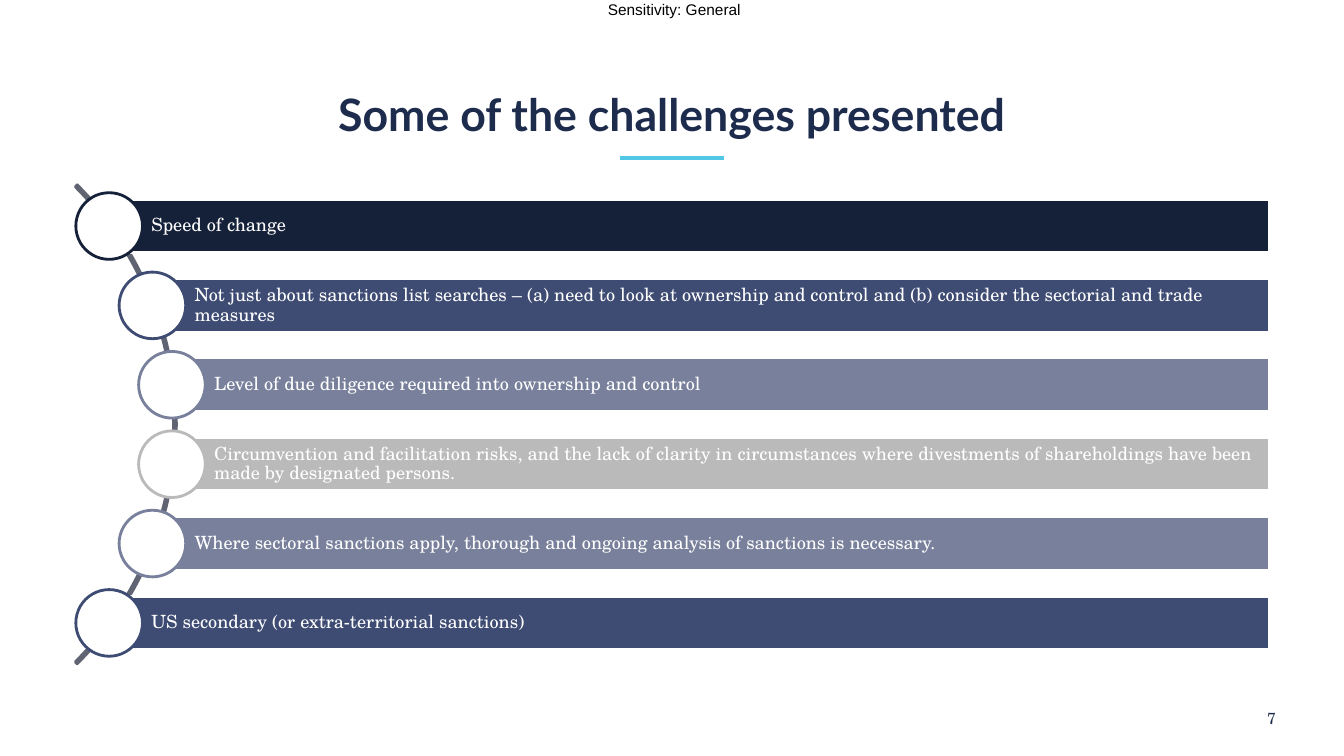
import math

import pptx
import pptx.dml.color
import pptx.enum.shapes
import pptx.enum.text
import pptx.oxml
import pptx.util

Pt = pptx.util.Pt
RGBColor = pptx.dml.color.RGBColor
Shape = pptx.enum.shapes.MSO_SHAPE
Align = pptx.enum.text.PP_ALIGN
Anchor = pptx.enum.text.MSO_ANCHOR

WHITE = RGBColor(0xFF, 0xFF, 0xFF)
BLACK = RGBColor(0x00, 0x00, 0x00)
INK = RGBColor(0x1D, 0x2B, 0x4D)
CYAN = RGBColor(0x52, 0xC7, 0xE6)
RAIL = RGBColor(0x60, 0x64, 0x72)
NAVY = RGBColor(0x15, 0x20, 0x39)
BLUE = RGBColor(0x3E, 0x4B, 0x73)
SLATE = RGBColor(0x78, 0x80, 0x9B)
SILVER = RGBColor(0xBA, 0xBA, 0xBA)

CHALLENGES = [
    ("Speed of change", NAVY),
    ("Not just about sanctions list searches – (a) need to look at ownership and control "
     "and (b) consider the sectorial and trade measures", BLUE),
    ("Level of due diligence required into ownership and control", SLATE),
    ("Circumvention and facilitation risks, and the lack of clarity in circumstances where "
     "divestments of shareholdings have been made by designated persons.", SILVER),
    ("Where sectoral sanctions apply, thorough and ongoing analysis of sanctions is necessary.",
     SLATE),
    ("US secondary (or extra-territorial sanctions)", BLUE),
]

ROW_STEP = 56.7
MIDDLE = 303.2
BAR_RIGHT = 906.7
BAR_HEIGHT = 38.1
CIRCLE = 47.6
ORBIT_CENTRE = -114.7
ORBIT_RADIUS = 239.2


class Painter:
    body_font = "TeX Gyre Schola"
    title_font = "Lato"
    label_font = "Arial"
    stroke = 2

    def __init__(self, page):
        self.page = page

    def set_text(self, shape, text, font, size, color, align, anchor, insets=(0, 0, 0, 0)):
        frame = shape.text_frame
        frame.word_wrap = True
        frame.vertical_anchor = anchor
        (frame.margin_left, frame.margin_top,
         frame.margin_right, frame.margin_bottom) = map(Pt, insets)
        para = frame.paragraphs[0]
        para.text = text
        para.alignment = align
        para.font.name = font
        para.font.size = Pt(size)
        para.font.color.rgb = color
        return para

    def label(self, left, top, width, height, text, font, size, color, align, anchor):
        box = self.page.shapes.add_textbox(Pt(left), Pt(top), Pt(width), Pt(height))
        return self.set_text(box, text, font, size, color, align, anchor)

    def shape(self, kind, left, top, width, height, fill, line):
        shape = self.page.shapes.add_shape(kind, Pt(left), Pt(top), Pt(width), Pt(height))
        shape.shadow.inherit = False
        if fill is None:
            shape.fill.background()
        else:
            shape.fill.solid()
            shape.fill.fore_color.rgb = fill
        shape.line.color.rgb = line
        shape.line.width = Pt(self.stroke)
        return shape

    def rule(self, left, right, top, color, width):
        line = self.page.shapes.add_connector(
            pptx.enum.shapes.MSO_CONNECTOR.STRAIGHT, Pt(left), Pt(top), Pt(right), Pt(top))
        line.line.color.rgb = color
        line.line.width = Pt(width)
        line._element.spPr.append(pptx.oxml.parse_xml(
            '<a:effectLst xmlns:a="http://schemas.openxmlformats.org/drawingml/2006/main"/>'))

    def arc(self, left, top, size, color):
        arc = self.shape(Shape.BLOCK_ARC, left, top, size, size, None, color)
        for index, value in enumerate((189, 27, 0.004)):
            arc.adjustments[index] = value

    def challenge(self, centre_x, centre_y, text, color):
        bar = self.shape(Shape.RECTANGLE, centre_x, centre_y - BAR_HEIGHT / 2,
                         BAR_RIGHT - centre_x, BAR_HEIGHT, color, WHITE)
        para = self.set_text(bar, text, self.body_font, 13, WHITE, Align.LEFT, Anchor.MIDDLE,
                             (30.2, 2.6, 2.6, 2.6))
        para.line_spacing = 0.9
        self.shape(Shape.OVAL, centre_x - CIRCLE / 2, centre_y - CIRCLE / 2,
                   CIRCLE, CIRCLE, WHITE, color)


def main():
    deck = pptx.Presentation()
    deck.slide_width, deck.slide_height = Pt(960), Pt(540)
    painter = Painter(deck.slides.add_slide(deck.slide_layouts[6]))

    painter.label(432.7, 0, 98, 13, "Sensitivity: General", painter.label_font, 11, BLACK,
                  Align.CENTER, Anchor.TOP)
    painter.rule(442.8, 517, 113, CYAN, 2.5)
    title = painter.label(145.5, 28.8, 669, 71.3, "Some of the challenges presented",
                          painter.title_font, 31.9, INK, Align.CENTER, Anchor.BOTTOM)
    title.font.bold = True

    painter.arc(-357.8, 61.2, 483.8, RAIL)
    for index, (text, color) in enumerate(CHALLENGES):
        rise = (index - (len(CHALLENGES) - 1) / 2) * ROW_STEP
        centre_x = ORBIT_CENTRE + math.sqrt(ORBIT_RADIUS ** 2 - rise ** 2)
        painter.challenge(centre_x, MIDDLE + rise, text, color)

    painter.label(846.7, 504.7, 64.8, 15.8, "7", painter.body_font, 11.4, INK,
                  Align.RIGHT, Anchor.MIDDLE)
    deck.save("out.pptx")


if __name__ == "__main__":
    main()
